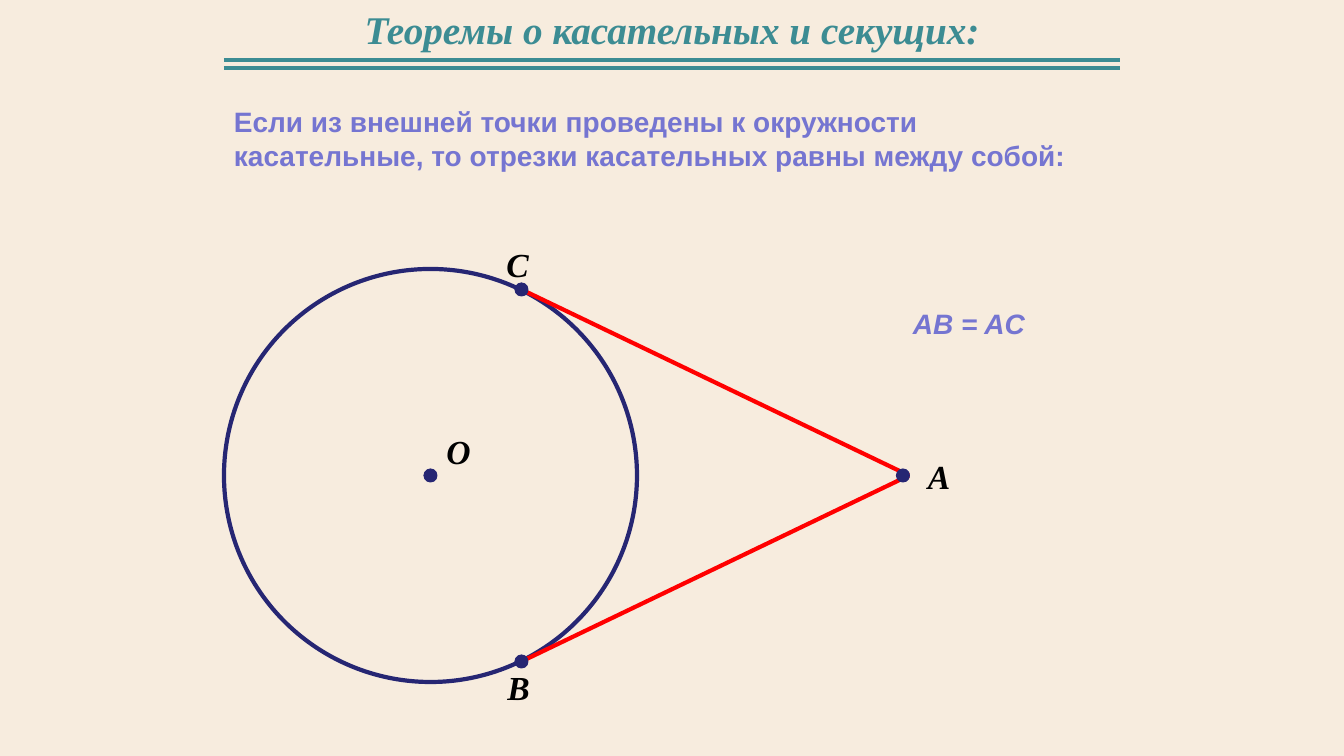
from dataclasses import dataclass

from lxml.etree import SubElement
from pptx import Presentation
from pptx.dml.color import RGBColor
from pptx.enum.shapes import MSO_CONNECTOR, MSO_SHAPE
from pptx.enum.text import MSO_ANCHOR, PP_ALIGN
from pptx.oxml.ns import qn
from pptx.util import Pt

EMU_PER_PX = 914400 / 100.8


@dataclass(frozen=True)
class Theme:
    background: str = "F7ECDE"
    teal: str = "3C8C93"
    violet: str = "7575D1"
    navy: str = "262673"
    red: str = "FF0000"
    black: str = "000000"
    serif: str = "Times New Roman"
    sans: str = "Arial"
    title_size: int = 28
    body_size: int = 20
    label_size: int = 24
    rule_width: float = 2.25
    figure_width: float = 3
    dot_width: float = 0.75


THEME = Theme()
TITLE_FORMAT = {"name": THEME.serif, "size": Pt(THEME.title_size), "bold": True, "italic": True}
BODY_FORMAT = {"name": THEME.sans, "size": Pt(THEME.body_size), "bold": True}
FORMULA_FORMAT = {**BODY_FORMAT, "italic": True}
LABEL_FORMAT = {**TITLE_FORMAT, "size": Pt(THEME.label_size)}


def px(*lengths):
    return [round(length * EMU_PER_PX) for length in lengths]


def set_attributes(target, values):
    for name, value in values.items():
        setattr(target, name, value)


def add_text(slide, box, text, font_format, color, **frame_format):
    alignment = frame_format.pop("alignment", PP_ALIGN.LEFT)
    frame = slide.shapes.add_textbox(*px(*box)).text_frame
    set_attributes(frame, {"word_wrap": True, **frame_format})
    paragraph = frame.paragraphs[0]
    paragraph.alignment = alignment
    run = paragraph.add_run()
    run.text = text
    set_attributes(run.font, font_format)
    run.font.color.rgb = RGBColor.from_string(color)


def add_line(slide, start, end, color, width):
    connector = slide.shapes.add_connector(MSO_CONNECTOR.STRAIGHT, *px(*start, *end))
    connector.line.color.rgb = RGBColor.from_string(color)
    connector.line.width = Pt(width)
    SubElement(connector._element.spPr, qn("a:effectLst"))


def add_ellipse(slide, box, width, filled):
    ellipse = slide.shapes.add_shape(MSO_SHAPE.OVAL, *px(*box))
    ellipse.shadow.inherit = False
    navy = RGBColor.from_string(THEME.navy)
    if filled:
        ellipse.fill.solid()
        ellipse.fill.fore_color.rgb = navy
    else:
        ellipse.fill.background()
    ellipse.line.color.rgb = navy
    ellipse.line.width = Pt(width)


def add_header(slide, box):
    left, top, width, height = box
    add_text(slide, box, "Теоремы о касательных и секущих:", TITLE_FORMAT, THEME.teal,
             alignment=PP_ALIGN.CENTER, vertical_anchor=MSO_ANCHOR.MIDDLE)
    inset = 56
    for gap in (3, 11):
        rule_y = top + height + gap
        add_line(slide, (left + inset, rule_y), (left + width - inset, rule_y),
                 THEME.teal, THEME.rule_width)


def add_theorem(slide, box):
    add_text(slide, box, "Если из внешней точки проведены к окружности касательные, "
             "то отрезки касательных равны между собой:", BODY_FORMAT, THEME.violet)


def add_formula(slide, box):
    add_text(slide, box, "AB = AC", FORMULA_FORMAT, THEME.violet)


def add_tangent_figure(slide, box):
    left, top, width, height = box
    diameter = height
    center_x, center_y = left + diameter / 2, top + diameter / 2
    touch_x, touch_y = center_x + 91, 186
    outer_x = left + width
    points = {
        "О": (outer_x, center_y),
    }
    points = {
        "O": (center_x, center_y, 6, -50),
        "А": (outer_x, center_y, 15, -25),
        "B": (touch_x, center_y + touch_y, -24, 0),
        "C": (touch_x, center_y - touch_y, -25, -51),
    }
    add_ellipse(slide, (left, top, diameter, diameter), THEME.figure_width, False)
    for touch in ("B", "C"):
        add_line(slide, (outer_x + 6, center_y), points[touch][:2], THEME.red, THEME.figure_width)
    dot = 13
    for name, (x, y, label_x, label_y) in points.items():
        add_ellipse(slide, (x - dot / 2, y - dot / 2, dot, dot), THEME.dot_width, True)
        add_text(slide, (x + label_x, y + label_y, 55, 50), name, LABEL_FORMAT, THEME.black)


def main():
    presentation = Presentation()
    presentation.slide_width, presentation.slide_height = px(1344, 756)
    slide = presentation.slides.add_slide(presentation.slide_layouts[6])
    slide.background.fill.solid()
    slide.background.fill.fore_color.rgb = RGBColor.from_string(THEME.background)
    add_header(slide, (168, 0, 1008, 57))
    add_theorem(slide, (224, 100, 897, 78))
    add_tangent_figure(slide, (224, 269, 679, 413))
    add_formula(slide, (903, 302, 218, 44))
    presentation.save("out.pptx")


if __name__ == "__main__":
    main()
